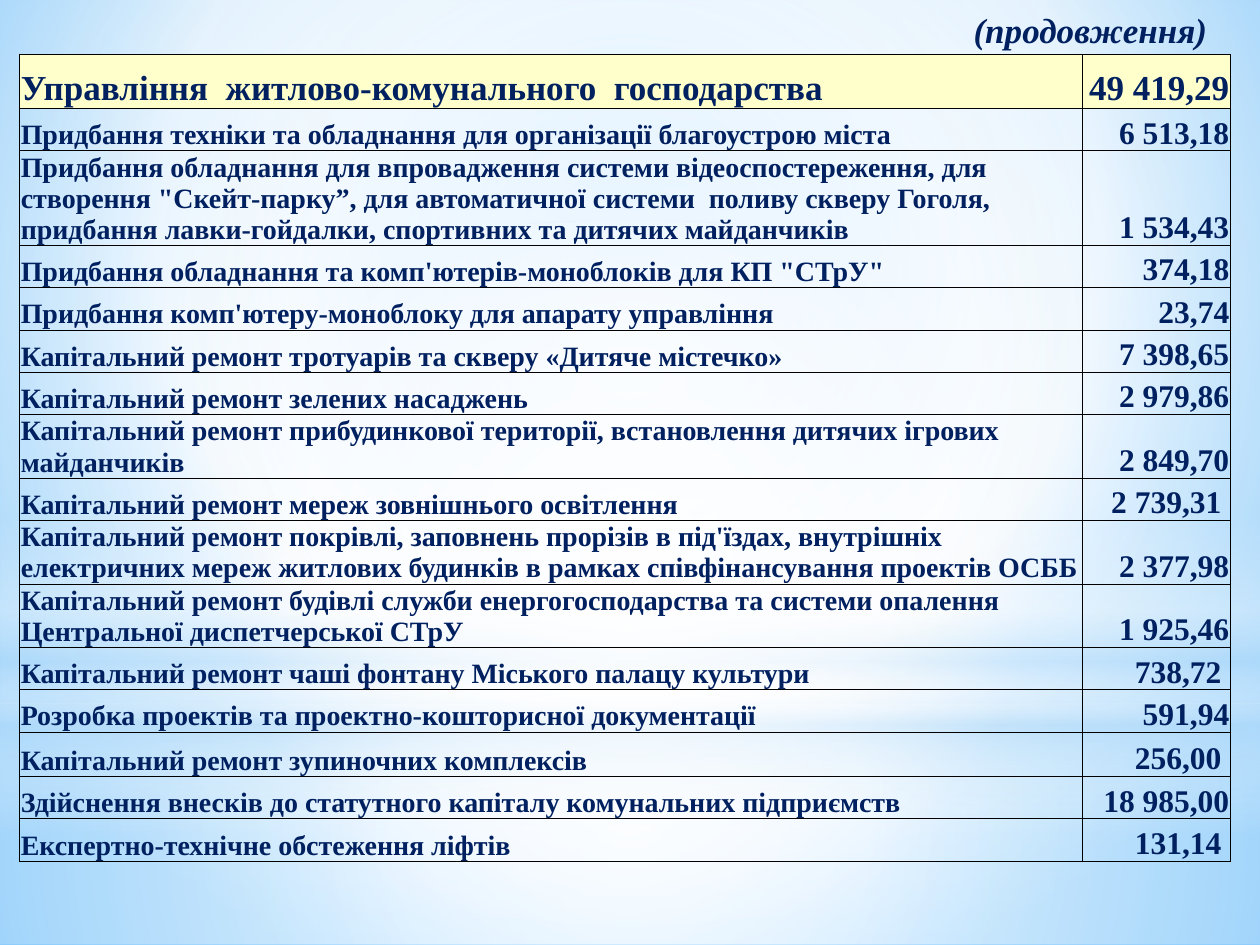
from dataclasses import dataclass

from pptx import Presentation
from pptx.dml.color import RGBColor
from pptx.enum.shapes import MSO_SHAPE as SHAPE
from pptx.enum.text import MSO_ANCHOR as ANCHOR, PP_ALIGN as ALIGN
from pptx.oxml import parse_xml
from pptx.oxml.ns import nsdecls, qn
from pptx.util import Pt


@dataclass(frozen=True)
class Theme:
    font: str = "Times New Roman"
    navy: str = "002060"
    cream: str = "FFFFCC"
    white: str = "FFFFFF"
    pale: str = "B4DCFA"
    sky: str = "9ED5FF"
    blue: str = "5BB9FF"
    border: str = "000000"
    heading: int = 20
    amount: int = 18
    item: int = 16


T = Theme()
W, H = 720, 540
CENTRE = (50, 50, 50, 50)

HEADER = ("Управління  житлово-комунального  господарства", "49 419,29")
ITEMS = [
    ("Придбання техніки та обладнання для організації благоустрою міста", "6 513,18"),
    ("Придбання обладнання для впровадження системи відеоспостереження, для "
     "створення \"Скейт-парку”, для автоматичної системи  поливу скверу Гоголя, "
     "придбання лавки-гойдалки, спортивних та дитячих майданчиків", "1 534,43"),
    ("Придбання обладнання та комп'ютерів-моноблоків для КП \"СТрУ\"", "374,18"),
    ("Придбання комп'ютеру-моноблоку для апарату управління", "23,74"),
    ("Капітальний ремонт тротуарів та скверу «Дитяче містечко»", "7 398,65"),
    ("Капітальний ремонт зелених насаджень", "2 979,86"),
    ("Капітальний ремонт прибудинкової території, встановлення дитячих ігрових "
     "майданчиків", "2 849,70"),
    ("Капітальний ремонт мереж зовнішнього освітлення", "2 739,31 "),
    ("Капітальний ремонт покрівлі, заповнень прорізів в під'їздах, внутрішніх "
     "електричних мереж житлових будинків в рамках співфінансування проектів ОСББ",
     "2 377,98"),
    ("Капітальний ремонт будівлі служби енергогосподарства та системи опалення "
     "Центральної диспетчерської СТрУ", "1 925,46"),
    ("Капітальний ремонт чаші фонтану Міського палацу культури", "738,72 "),
    ("Розробка проектів та проектно-кошторисної документації", "591,94"),
    ("Капітальний ремонт зупиночних комплексів", "256,00 "),
    ("Здійснення внесків до статутного капіталу комунальних підприємств", "18 985,00"),
    ("Експертно-технічне обстеження ліфтів", "131,14 "),
]


def set_attrs(obj, values):
    for name, value in values.items():
        setattr(obj, name, value)


def set_gradient(holder, stops, focus=None):
    """Swap a solid fill for a gradient: circular around focus, else vertical.

    Each stop is (position %, colour, opacity %).
    """
    gs = "".join(
        f'<a:gs pos="{pos * 1000}"><a:srgbClr val="{color}">'
        f'<a:alpha val="{alpha * 1000}"/></a:srgbClr></a:gs>'
        for pos, color, alpha in stops)
    if focus:
        rect = " ".join(f'{side}="{v * 1000}"' for side, v in zip("ltrb", focus))
        shade = f'<a:path path="circle"><a:fillToRect {rect}/></a:path>'
    else:
        shade = '<a:lin ang="5400000" scaled="0"/>'
    grad = parse_xml(f'<a:gradFill {nsdecls("a")} rotWithShape="1">'
                     f'<a:gsLst>{gs}</a:gsLst>{shade}</a:gradFill>')
    holder.replace(holder.find(qn("a:solidFill")), grad)


def set_background(s):
    s.background.fill.solid()
    set_gradient(s.element.find(".//" + qn("p:bgPr")),
                 [(0, T.sky, 100), (60, T.white, 100), (100, T.blue, 100)],
                 (20, 10, 20, 60))


def add_glow(s, kind, top, height, stops, focus=None):
    """Full-width translucent layer."""
    sp = s.shapes.add_shape(kind, 0, Pt(top), Pt(W), Pt(height))
    sp.shadow.inherit = False
    sp.line.fill.background()
    sp.fill.solid()
    set_gradient(sp.element.spPr, stops, focus)


def write(tf, text, size, align, italic=False):
    p = tf.paragraphs[0]
    p.alignment = align
    r = p.add_run()
    r.text = text
    set_attrs(r.font, dict(name=T.font, size=Pt(size), bold=True, italic=italic))
    r.font.color.rgb = RGBColor.from_string(T.navy)


def add_title(s, text):
    title = s.shapes.title
    set_attrs(title, dict(left=Pt(466.5), top=0, width=Pt(230.5), height=Pt(34)))
    set_attrs(title.text_frame, dict(word_wrap=True, vertical_anchor=ANCHOR.MIDDLE))
    write(title.text_frame, text, T.heading, ALIGN.RIGHT, italic=True)
    # Bring the title in front of the glow layers
    title.element.getparent().append(title.element)


def add_borders(cell):
    tc_pr = cell._tc.get_or_add_tcPr()
    for i, side in enumerate(("lnL", "lnR", "lnT", "lnB")):
        tc_pr.insert(i, parse_xml(
            f'<a:{side} {nsdecls("a")} w="6350"><a:solidFill>'
            f'<a:srgbClr val="{T.border}"/></a:solidFill></a:{side}>'))


def fill_cell(cell, text, size, align, color=None):
    set_attrs(cell, dict(margin_left=Pt(0.72), margin_right=Pt(0.72),
                         margin_top=Pt(0.72), margin_bottom=0,
                         vertical_anchor=ANCHOR.BOTTOM))
    if color:
        cell.fill.solid()
        cell.fill.fore_color.rgb = RGBColor.from_string(color)
    else:
        cell.fill.background()
    add_borders(cell)
    write(cell.text_frame, text, size, align)


def add_budget_table(s):
    rows = [HEADER] + ITEMS
    heights = [31] + [24.2] * len(ITEMS)
    heights[13] = 25.4
    widths = (607.5, 84.5)
    table = s.shapes.add_table(len(rows), 2, Pt(11.2), Pt(31),
                               Pt(sum(widths)), Pt(sum(heights))).table
    set_attrs(table, dict(first_row=False, horz_banding=False))
    for col, width in zip(table.columns, widths):
        col.width = Pt(width)
    for i, (texts, height) in enumerate(zip(rows, heights)):
        table.rows[i].height = Pt(height)
        sizes = (T.item, T.amount) if i else (T.heading, T.heading)
        for j, align in enumerate((ALIGN.LEFT, ALIGN.RIGHT)):
            fill_cell(table.cell(i, j), texts[j], sizes[j], align,
                      None if i else T.cream)


def main():
    prs = Presentation()
    set_attrs(prs, dict(slide_width=Pt(W), slide_height=Pt(H)))
    s = prs.slides.add_slide(prs.slide_layouts[5])

    # Background and glow layers
    set_background(s)
    horizon = 402
    add_glow(s, SHAPE.RECTANGLE, horizon, H - horizon,
             [(0, T.white, 91), (37, T.white, 76), (100, T.pale, 79)], CENTRE)
    add_glow(s, SHAPE.RECTANGLE, 0, horizon,
             [(0, T.white, 89), (48, T.white, 62), (100, T.pale, 79)], CENTRE)
    add_glow(s, SHAPE.RECTANGLE, 297, 180,
             [(0, T.white, 0), (29, T.white, 30), (45, T.pale, 40),
              (55, T.white, 26), (65, T.pale, 60), (100, T.white, 0)])
    add_glow(s, SHAPE.OVAL, 126, horizon,
             [(0, T.white, 100), (56, T.white, 0)], CENTRE)

    # Title and table
    add_title(s, "(продовження)")
    add_budget_table(s)

    prs.save("out.pptx")


if __name__ == "__main__":
    main()
